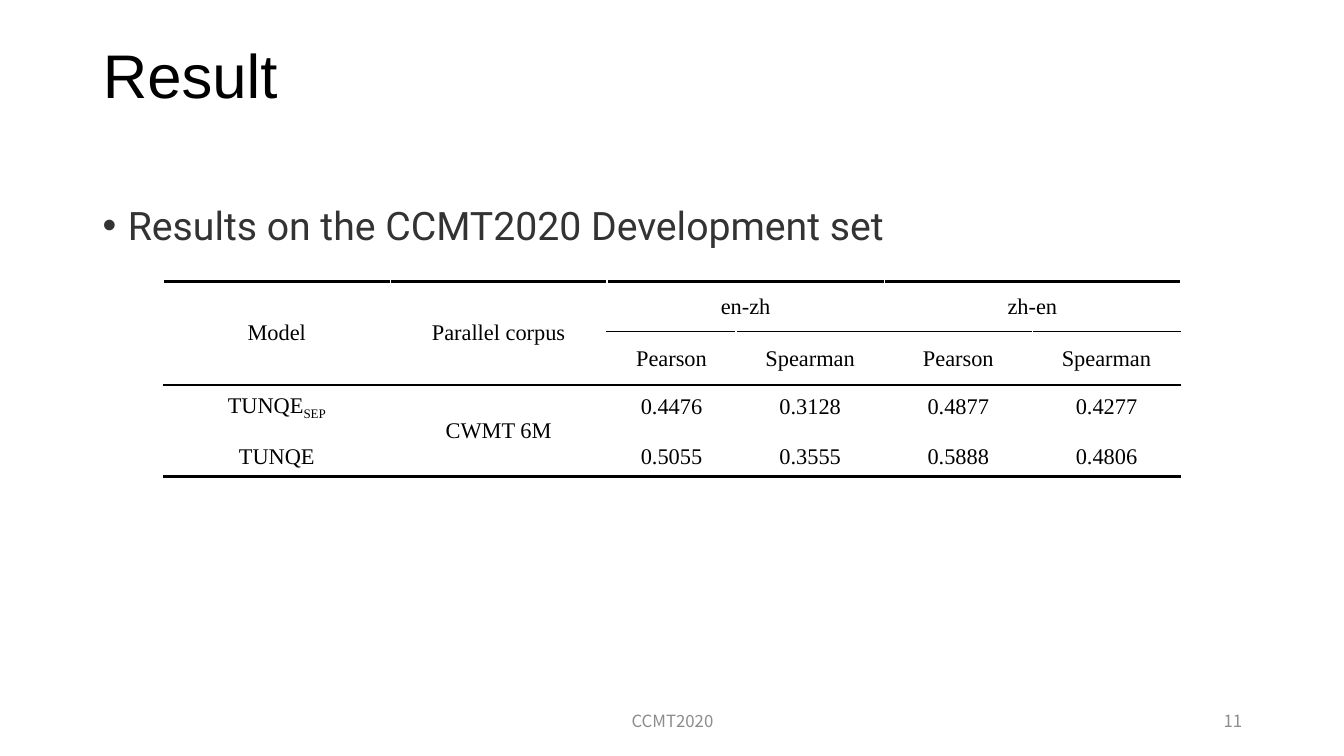
from dataclasses import dataclass

from lxml.etree import SubElement
from pptx import Presentation
from pptx.dml.color import RGBColor
from pptx.enum.text import MSO_ANCHOR as Anchor, PP_ALIGN as Align
from pptx.oxml.ns import qn
from pptx.util import Inches, Pt

BLACK = RGBColor(0x00, 0x00, 0x00)
WHITE = RGBColor(0xFF, 0xFF, 0xFF)
DARK = RGBColor(0x33, 0x33, 0x33)
GRAY = RGBColor(0x8C, 0x8C, 0x8C)


@dataclass
class Label:
    text: str
    left: float
    top: float
    width: float
    height: float
    font: str
    size: float
    color: RGBColor
    align: Align = Align.LEFT
    anchor: Anchor = Anchor.TOP
    space: float = 1.0
    bullet: bool = False


def style(para, font: str, size: float, color: RGBColor) -> None:
    para.font.name = font
    para.font.size = Pt(size)
    para.font.color.rgb = color


def fill_text(shape, label: Label) -> None:
    shape.left, shape.top = Inches(label.left), Inches(label.top)
    shape.width, shape.height = Inches(label.width), Inches(label.height)
    frame = shape.text_frame
    frame.word_wrap = True
    frame.vertical_anchor = label.anchor
    frame.text = label.text
    para = frame.paragraphs[0]
    para.alignment = label.align
    para.line_spacing = label.space
    if label.bullet:
        props = para._p.get_or_add_pPr()
        props.set("marL", str(Inches(0.25)))
        props.set("indent", str(-Inches(0.25)))
        SubElement(props, qn("a:buFont")).set("typeface", "Arial")
        SubElement(props, qn("a:buChar")).set("char", "•")
    style(para, label.font, label.size, label.color)


def add_edge(cell, side: str, place: int, width: float, color: RGBColor) -> None:
    """Draw one cell border; zero width means no line."""
    props = cell._tc.get_or_add_tcPr()
    line = SubElement(props, qn(f"a:ln{side}"))
    props.insert(place, line)
    line.set("w", str(Pt(width)))
    if width:
        fill = SubElement(line, qn("a:solidFill"))
        SubElement(fill, qn("a:srgbClr")).set("val", str(color))
    else:
        SubElement(line, qn("a:noFill"))


# Table content; None marks a cell covered by a merge
ROWS = [
    ["Model", "Parallel corpus", "en-zh", None, "zh-en", None],
    [None, None, "Pearson", "Spearman", "Pearson", "Spearman"],
    ["TUNQE", "CWMT 6M", "0.4476", "0.3128", "0.4877", "0.4277"],
    ["TUNQE", None, "0.5055", "0.3555", "0.5888", "0.4806"],
]
WIDTHS = [2.25, 2.15, 1.28, 1.47, 1.47, 1.47]
HEIGHTS = [0.5, 0.53, 0.45, 0.46]
SPANS = [(0, 0, 1, 0), (0, 1, 1, 1), (0, 2, 0, 3), (0, 4, 0, 5), (2, 1, 3, 1)]
RULES = [2.25, 1, 1, 0, 2.25]
# Left, top, right and bottom margins by row
PADS = [
    (0.09, 0.05, 0.09, 0.05),
    (0.01, 0.01, 0.01, 0),
    (0.01, 0, 0.01, 0.01),
    (0.01, 0.07, 0.01, 0.01),
]


def add_results(slide) -> None:
    table = slide.shapes.add_table(
        len(ROWS), len(WIDTHS), Inches(1.62), Inches(2.79),
        Inches(sum(WIDTHS)), Inches(sum(HEIGHTS))).table
    table.first_row = table.horz_banding = False
    for col, width in zip(table.columns, WIDTHS):
        col.width = Inches(width)
    for row, height in zip(table.rows, HEIGHTS):
        row.height = Inches(height)
    ends = {}
    for top, left, low, right in SPANS:
        table.cell(top, left).merge(table.cell(low, right))
        for r in range(top, low + 1):
            for c in range(left, right + 1):
                ends[r, c] = top, low

    for r, row in enumerate(ROWS):
        for c, text in enumerate(row):
            cell = table.cell(r, c)
            cell.fill.background()
            top, low = ends.get((r, c), (r, r))
            side = 1 if r < 2 else 0
            edges = [("L", side, WHITE), ("R", side, WHITE),
                     ("T", RULES[top], BLACK), ("B", RULES[low + 1], BLACK)]
            for place, (name, width, color) in enumerate(edges):
                add_edge(cell, name, place, width, color)
            pads = [Inches(pad) for pad in PADS[r]]
            (cell.margin_left, cell.margin_top,
             cell.margin_right, cell.margin_bottom) = pads
            cell.vertical_anchor = Anchor.MIDDLE
            if text is None:
                continue
            cell.text = text
            para = cell.text_frame.paragraphs[0]
            para.alignment = Align.CENTER
            style(para, "Times New Roman", 16, BLACK)

    # Subscript of the first model
    run = table.cell(2, 0).text_frame.paragraphs[0].add_run()
    run.text = "SEP"
    run._r.get_or_add_rPr().set("baseline", "-25000")


TITLE = Label("Result", 0.92, 0.4, 7.55, 0.96, "Arial", 44, BLACK, space=0.9)
LABELS = [
    Label("11", 9.42, 6.95, 3, 0.4, "Noto Sans CJK SC", 12, GRAY,
          Align.RIGHT, Anchor.MIDDLE),
    Label("CCMT2020", 4.42, 6.95, 4.5, 0.4, "Noto Sans CJK SC", 12, GRAY,
          Align.CENTER, Anchor.MIDDLE),
    Label("Results on the CCMT2020 Development set", 0.92, 2, 11.5, 4.76,
          "Roboto", 28, DARK, space=0.9, bullet=True),
]


def main() -> None:
    deck = Presentation()
    deck.slide_width, deck.slide_height = Inches(13.33), Inches(7.5)
    slide = deck.slides.add_slide(deck.slide_layouts[5])

    # Title, table, then footer and body text
    fill_text(slide.shapes.title, TITLE)
    add_results(slide)
    for label in LABELS:
        fill_text(slide.shapes.add_textbox(0, 0, 0, 0), label)

    deck.save("out.pptx")


if __name__ == "__main__":
    main()
